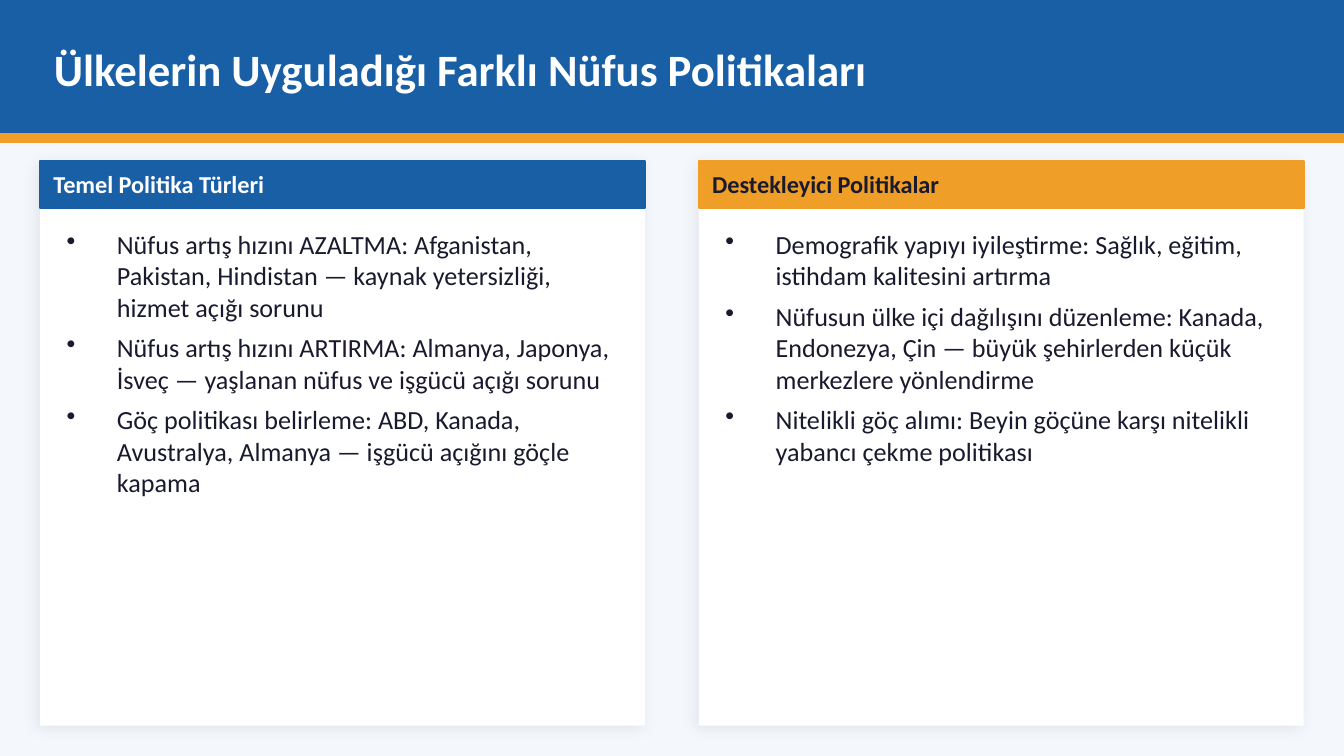
from lxml.etree import SubElement
from pptx import Presentation
from pptx.dml.color import RGBColor
from pptx.enum.shapes import MSO_SHAPE
from pptx.enum.text import MSO_ANCHOR
from pptx.oxml.ns import qn
from pptx.util import Cm, Pt

BLUE, ORANGE, WHITE, INK, PALE = "185FA5", "EF9F27", "FFFFFF", "1A1A2E", "F4F7FC"
SLIDE_WIDTH, SLIDE_HEIGHT = 25.4, 14.29
MARGIN, PANEL_TOP, PANEL_WIDTH, PANEL_HEIGHT = 0.76, 3.05, 11.43, 10.67
INSET = 0.25

PANELS = [
    ("Temel Politika Türleri", BLUE, WHITE, [
        "Nüfus artış hızını AZALTMA: Afganistan, Pakistan, Hindistan — kaynak yetersizliği, hizmet açığı sorunu",
        "Nüfus artış hızını ARTIRMA: Almanya, Japonya, İsveç — yaşlanan nüfus ve işgücü açığı sorunu",
        "Göç politikası belirleme: ABD, Kanada, Avustralya, Almanya — işgücü açığını göçle kapama",
    ]),
    ("Destekleyici Politikalar", ORANGE, INK, [
        "Demografik yapıyı iyileştirme: Sağlık, eğitim, istihdam kalitesini artırma",
        "Nüfusun ülke içi dağılışını düzenleme: Kanada, Endonezya, Çin — büyük şehirlerden küçük merkezlere yönlendirme",
        "Nitelikli göç alımı: Beyin göçüne karşı nitelikli yabancı çekme politikası",
    ]),
]


def color(value):
    """Turn a hex string into a colour."""
    return RGBColor.from_string(value)


def add_rectangle(slide, left, top, width, height, fill, outlined=True):
    """Add a filled rectangle, outlined in its own colour if asked."""
    shape = slide.shapes.add_shape(MSO_SHAPE.RECTANGLE, Cm(left), Cm(top), Cm(width), Cm(height))
    shape.shadow.inherit = False
    shape.fill.solid()
    shape.fill.fore_color.rgb = color(fill)
    if outlined:
        shape.line.color.rgb = color(fill)
        shape.line.width = Pt(1)
    else:
        shape.line.fill.background()
    return shape


def add_soft_shadow(shape):
    """Give a shape a faint shadow towards the lower left."""
    effects = shape._element.spPr.find(qn("a:effectLst"))
    shadow = SubElement(effects, qn("a:outerShdw"), blurRad=str(Pt(8)), dist=str(Pt(2)),
                        dir="8100000", algn="bl", rotWithShape="0")
    black = SubElement(shadow, qn("a:srgbClr"), val="000000")
    SubElement(black, qn("a:alpha"), val="8000")


def style_font(paragraph, size, ink, bold=False):
    """Set the font of a whole paragraph."""
    font = paragraph.font
    font.name, font.size, font.bold = "Calibri", Pt(size), bold
    font.color.rgb = color(ink)


def add_text_frame(slide, left, top, width, height):
    """Add a wrapping text box and return its frame."""
    frame = slide.shapes.add_textbox(Cm(left), Cm(top), Cm(width), Cm(height)).text_frame
    frame.word_wrap = True
    return frame


def add_heading(slide, left, top, width, height, text, size, ink):
    """Add a bold, vertically centred line of text without insets."""
    frame = add_text_frame(slide, left, top, width, height)
    frame.margin_left = frame.margin_top = frame.margin_right = frame.margin_bottom = 0
    frame.vertical_anchor = MSO_ANCHOR.MIDDLE
    frame.text = text
    style_font(frame.paragraphs[0], size, ink, bold=True)


def add_bullets(slide, left, top, width, height, items):
    """Add a bulleted list with hanging indents."""
    frame = add_text_frame(slide, left, top, width, height)
    frame.text = "\n".join(items)
    for paragraph in frame.paragraphs:
        properties = paragraph._p.get_or_add_pPr()
        properties.set("marL", str(Cm(0.95)))
        properties.set("indent", str(-Cm(0.95)))
        SubElement(properties, qn("a:buChar"), char="•")
        paragraph.space_after = Pt(5)
        style_font(paragraph, 14, INK)


def add_title_band(slide, left, top, width, height, title):
    """Add the title band with its accent stripe below."""
    add_rectangle(slide, left, top, width, height, BLUE)
    add_rectangle(slide, left, top + height, width, 0.15, ORANGE)
    add_heading(slide, left + 1.02, top + INSET, width - 2.04, 2.08, title, 24, WHITE)


def add_panel(slide, left, top, width, height, heading, fill, ink, items):
    """Add a white card with a coloured heading bar and a list."""
    add_soft_shadow(add_rectangle(slide, left, top, width, height, WHITE, outlined=False))
    add_rectangle(slide, left, top, width, 0.89, fill)
    text_left, text_width = left + INSET, width - 2 * INSET
    add_heading(slide, text_left, top + 0.05, text_width, 0.76, heading, 13, ink)
    add_bullets(slide, text_left, top + 1.14, text_width, height - 1.53, items)


def main():
    """Build and save the presentation."""
    presentation = Presentation()
    presentation.slide_width, presentation.slide_height = Cm(SLIDE_WIDTH), Cm(SLIDE_HEIGHT)
    slide = presentation.slides.add_slide(presentation.slide_layouts[6])
    slide.background.fill.solid()
    slide.background.fill.fore_color.rgb = color(PALE)
    add_title_band(slide, 0, 0, SLIDE_WIDTH, 2.54, "Ülkelerin Uyguladığı Farklı Nüfus Politikaları")
    step = SLIDE_WIDTH - 2 * MARGIN - PANEL_WIDTH
    for index, panel in enumerate(PANELS):
        add_panel(slide, MARGIN + index * step, PANEL_TOP, PANEL_WIDTH, PANEL_HEIGHT, *panel)
    presentation.save("out.pptx")


if __name__ == "__main__":
    main()
